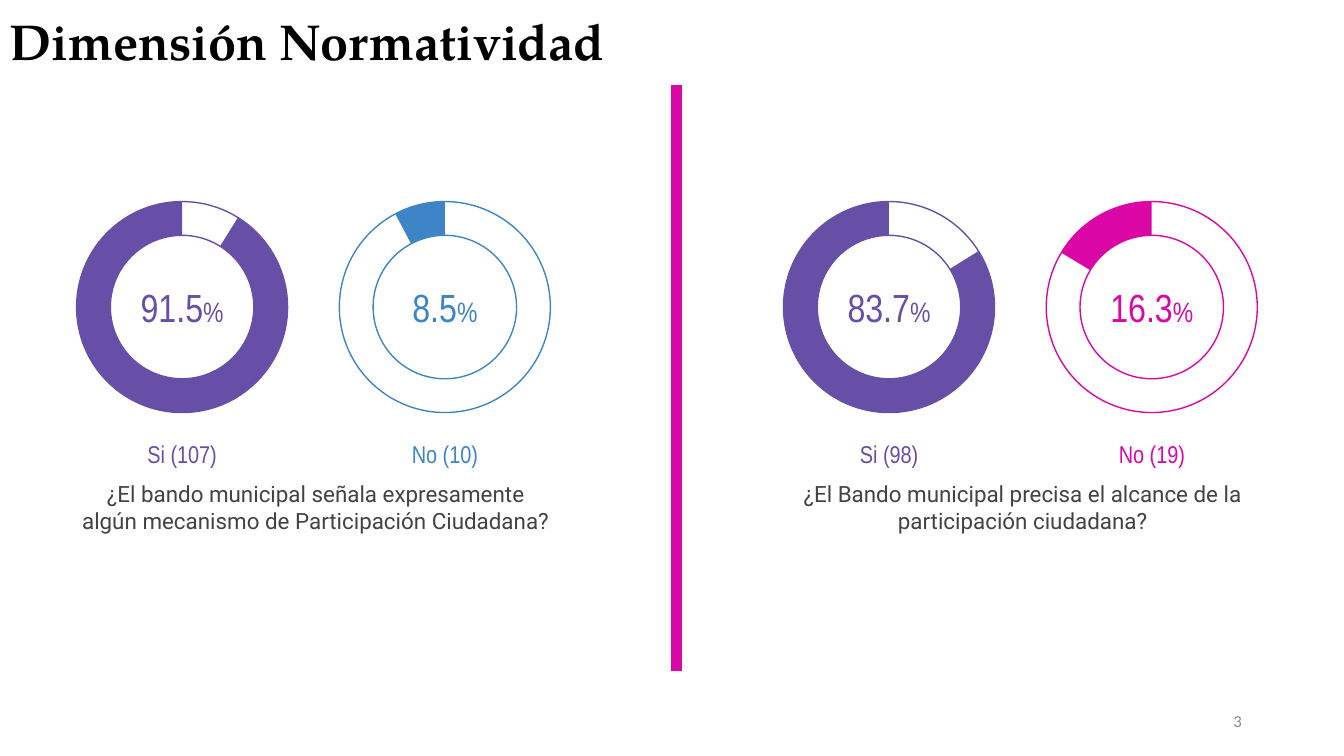
from dataclasses import dataclass

from lxml import etree
from pptx import Presentation
from pptx import util as u
from pptx.dml.color import RGBColor
from pptx.enum import shapes, text
from pptx.oxml.ns import qn

PX = 4572  # 200 px to the inch
PURPLE, BLUE, MAGENTA = "674EA7", "3D85C6", "DB06A6"
RING_SIZE, RING_TOP, RING_STEP = 314, 300, 391
RING_THICKNESS = 0.16
ARC_END = 270  # twelve o'clock, in degrees clockwise from three o'clock


@dataclass
class Ring:
    percent: str
    answer: str
    color: str
    arc_start: int


@dataclass
class Panel:
    left: int
    question: str
    rings: list[Ring]


PANELS = [
    Panel(114, "¿El bando municipal señala expresamente algún mecanismo de Participación Ciudadana?", [
        Ring("91.5", "Si (107)", PURPLE, 302),
        Ring("8.5", "No (10)", BLUE, 242),
    ]),
    Panel(1166, "¿El Bando municipal precisa el alcance de la participación ciudadana?", [
        Ring("83.7", "Si (98)", PURPLE, 328),
        Ring("16.3", "No (19)", MAGENTA, 211),
    ]),
]


def px(*lengths: int) -> list[u.Emu]:
    return [u.Emu(length * PX) for length in lengths]


def rgb(color: str) -> RGBColor:
    return RGBColor.from_string(color)


def write(shape, runs: list[tuple[str, int]], font: str, color: str,
          align=text.PP_ALIGN.CENTER, bold: bool = False, inset_y: int = 14, **frame_format) -> None:
    """Fill a shape with one paragraph of (wording, point size) runs."""
    inset_x, inset_y = px(14, inset_y)
    frame_values = {
        "word_wrap": True, "auto_size": text.MSO_AUTO_SIZE.NONE,
        "vertical_anchor": text.MSO_ANCHOR.MIDDLE,
        "margin_left": inset_x, "margin_right": inset_x,
        "margin_top": inset_y, "margin_bottom": inset_y,
    } | frame_format
    for name, value in frame_values.items():
        setattr(shape.text_frame, name, value)
    paragraph = shape.text_frame.paragraphs[0]
    paragraph.alignment = align
    for wording, size in runs:
        run = paragraph.add_run()
        run.text = wording
        for name, value in {"name": font, "size": u.Pt(size), "bold": bold}.items():
            setattr(run.font, name, value)
        run.font.color.rgb = rgb(color)


def add_ring(group, ring: Ring, left: int) -> None:
    box = px(left, RING_TOP, RING_SIZE, RING_SIZE)
    outline = group.shapes.add_shape(shapes.MSO_SHAPE.DONUT, *box)
    outline.shadow.inherit = False
    outline.adjustments[0] = RING_THICKNESS
    outline.fill.background()
    outline.line.color.rgb = rgb(ring.color)
    outline.line.width = u.Pt(0.75)

    arc = group.shapes.add_shape(shapes.MSO_SHAPE.BLOCK_ARC, *box)
    arc.shadow.inherit = False
    # Angles are stored in 60000ths of a degree, adjustments in 100000ths.
    for index, value in enumerate((ring.arc_start * 0.6, ARC_END * 0.6, RING_THICKNESS)):
        arc.adjustments[index] = value
    arc.fill.solid()
    arc.fill.fore_color.rgb = rgb(ring.color)
    arc.line.fill.background()

    answer = group.shapes.add_textbox(*px(left - 12, 640, 338, 70))
    write(answer, [(ring.answer, 13)], "Arial Narrow", ring.color)
    percent = group.shapes.add_textbox(*px(left + 76, 422, 162, 70))
    write(percent, [(ring.percent, 21), ("%", 15)], "Arial Narrow", ring.color)


def add_panel(slide, panel: Panel) -> None:
    group = slide.shapes.add_group_shape()
    for index, ring in enumerate(panel.rings):
        add_ring(group, ring, panel.left + index * RING_STEP)
    question = group.shapes.add_textbox(*px(panel.left - 12, 707, 736, 96))
    write(question, [(panel.question, 12)], "Roboto", "434343")


def add_divider(slide) -> None:
    divider = slide.shapes.add_connector(shapes.MSO_CONNECTOR.STRAIGHT, *px(1007, 126, 1007, 999))
    divider.line.color.rgb = rgb(MAGENTA)
    divider.line.width = u.Pt(6)
    etree.SubElement(divider._element.spPr, qn("a:effectLst"))


def main() -> None:
    presentation = Presentation()
    presentation.slide_width, presentation.slide_height = px(2000, 1125)
    slide = presentation.slides.add_slide(presentation.slide_layouts[5])

    title = slide.shapes.title
    title.left, title.top, title.width, title.height = px(0, 1, 928, 122)
    write(title, [("Dimensión Normatividad", 27)], "TeX Gyre Pagella", "000000",
          text.PP_ALIGN.JUSTIFY, bold=True, vertical_anchor=text.MSO_ANCHOR.TOP,
          auto_size=text.MSO_AUTO_SIZE.SHAPE_TO_FIT_TEXT)

    page_number = slide.shapes.add_textbox(*px(1412, 1043, 450, 60))
    write(page_number, [("3", 9)], "Calibri", "888888", text.PP_ALIGN.RIGHT, inset_y=8)

    add_divider(slide)
    for panel in PANELS:
        add_panel(slide, panel)
    presentation.save("out.pptx")


if __name__ == "__main__":
    main()
